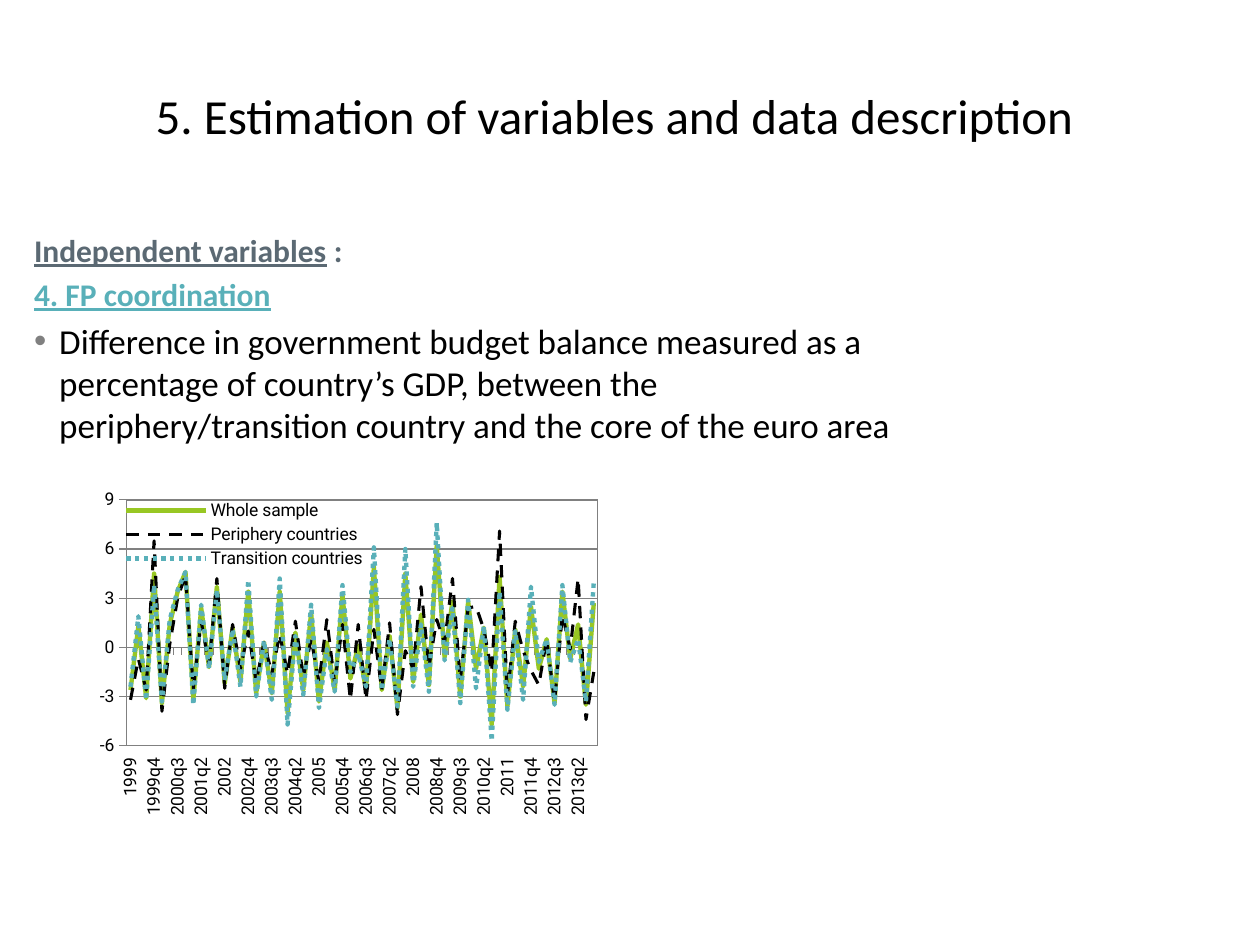
from lxml import etree
from pptx import Presentation
from pptx import util as u
from pptx.chart.data import CategoryChartData
from pptx.dml.color import RGBColor
from pptx.enum import chart as c
from pptx.enum import dml, text
from pptx.oxml import parse_xml
from pptx.oxml.ns import nsdecls, qn

BLACK = RGBColor(0x00, 0x00, 0x00)
GRAY = RGBColor(0x80, 0x80, 0x80)
SLATE = RGBColor(0x5B, 0x69, 0x73)
TEAL = RGBColor(0x59, 0xB0, 0xB9)
GREEN = RGBColor(0x98, 0xC7, 0x23)

QUARTERS = [str(year) if quarter == 1 else f"{year}q{quarter}"
            for year in range(1999, 2014) for quarter in range(1, 5)]

# Name, colour, width, dash, values
SERIES = [
    ("Whole sample", GREEN, 2.5, None,
     [-2.6, 1.3, -3.1, 4.5, -3.4, 1.4, 3.4, 4.6, -3.2, 2.4, -1.2, 3.7,
      -2.2, 1.2, -2.1, 3.4, -2.8, 0.3, -2.8, 3.4, -4, 0.9, -2.6, 2.1,
      -3.3, 0.3, -2.6, 3.2, -1.9, 0.1, -2.6, 4.9, -2.6, 0.7, -3.7, 4.5,
      -2.1, 2, -2.3, 6.2, -0.6, 2.8, -3, 2.8, -1.3, 1.2, -4.7, 4.3,
      -3.6, 1.1, -2.4, 2.5, -1.3, 0.5, -3.4, 3.4, -0.7, 1.4, -3.5, 2.7]),
    ("Periphery countries", BLACK, 1.75, dml.MSO_LINE.DASH,
     [-3.2, -0.7, -2.6, 6.5, -3.9, 0.2, 3, 4.4, -2.5, 1.6, -1.1, 4.2,
      -2.5, 1.4, -1.3, 1, -2.1, 0.3, -1.6, 0.8, -1.6, 1.6, -1.8, 0.5,
      -2.1, 1.7, -2.2, 1.4, -3.2, 1.4, -3.2, 1.1, -2.6, 1.5, -4.1, -0.2,
      -1.3, 3.7, -1.2, 1.7, 0.3, 4.2, -2, 2.4, 2.5, 1.1, -1.5, 7.1,
      -2.9, 1.6, -0.2, -1.4, -2.3, 0.5, -3.3, 2, -0.1, 4.2, -4.4, -1.5]),
    ("Transition countries", TEAL, 2.5, dml.MSO_LINE.ROUND_DOT,
     [-2.4, 1.9, -3.2, 3.8, -3.3, 1.7, 3.5, 4.6, -3.5, 2.6, -1.3, 3.5,
      -2, 1.1, -2.4, 4.1, -3, 0.4, -3.2, 4.2, -4.7, 0.7, -2.9, 2.6,
      -3.7, -0.1, -2.7, 3.8, -1.5, -0.4, -2.4, 6.1, -2.6, 0.5, -3.6, 6,
      -2.4, 1.4, -2.7, 7.6, -0.8, 2.4, -3.4, 2.9, -2.5, 1.3, -5.7, 3.4,
      -3.8, 1, -3.2, 3.7, -0.9, 0.5, -3.5, 3.8, -0.9, 0.5, -3.3, 4]),
]


def place(box, left, top, width, height):
    box.left, box.top = u.Inches(left), u.Inches(top)
    box.width, box.height = u.Inches(width), u.Inches(height)


def add_text(para, words, size=18, color=BLACK, bold=False, underline=False):
    span = para.add_run()
    span.text = words
    span.font.name = "Calibri"
    span.font.size = u.Pt(size)
    span.font.color.rgb = color
    span.font.bold = bold
    span.font.underline = underline


def set_bullet(para, mark=None):
    """Give the paragraph a hanging indent and a gray bullet, or none."""
    properties = para._p.get_or_add_pPr()
    properties.set("marL", str(u.Inches(0.2)))
    properties.set("indent", str(-u.Inches(0.2)))
    if mark is None:
        etree.SubElement(properties, qn("a:buNone"))
        return
    color = etree.SubElement(properties, qn("a:buClr"))
    etree.SubElement(color, qn("a:srgbClr"), val=str(GRAY))
    etree.SubElement(properties, qn("a:buFont"), typeface="Arial")
    etree.SubElement(properties, qn("a:buChar"), char=mark)


def add_title(page):
    title = page.shapes.title
    place(title, 0.5, 0.5, 8.75, 0.83)
    title.text_frame.vertical_anchor = text.MSO_ANCHOR.MIDDLE
    para = title.text_frame.paragraphs[0]
    para.alignment = text.PP_ALIGN.CENTER
    add_text(para, "5. Estimation of variables and data description", size=28)


def add_body(page):
    body = page.placeholders[1]
    place(body, 0.17, 0.08, 7, 6.17)
    frame = body.text_frame
    frame.vertical_anchor = text.MSO_ANCHOR.TOP
    frame.margin_top = u.Inches(1.75)

    heading = frame.paragraphs[0]
    set_bullet(heading)
    heading.space_before = u.Pt(0)
    add_text(heading, "Independent variables", color=SLATE, bold=True, underline=True)
    add_text(heading, " :", color=SLATE, bold=True)

    variable = frame.add_paragraph()
    set_bullet(variable)
    add_text(variable, "4. FP coordination", color=TEAL, bold=True, underline=True)

    definition = frame.add_paragraph()
    set_bullet(definition, "•")
    add_text(definition, "Difference in government budget balance measured as a "
             "percentage of country’s GDP, between the periphery/transition "
             "country and the core of the euro area", size=20)


def set_layout(element, left, top, width, height, inner=False):
    """Fix the place of a chart part, in fractions of the chart."""
    for old in element.findall(qn("c:layout")):
        element.remove(old)
    target = '<c:layoutTarget val="inner"/>' if inner else ""
    sizes = "".join(f'<c:{key} val="{value}"/>' for key, value in
                    zip("xywh", (left, top, width, height)))
    layout = parse_xml(
        f'<c:layout {nsdecls("c")}><c:manualLayout>{target}'
        f'<c:xMode val="edge"/><c:yMode val="edge"/>{sizes}'
        '</c:manualLayout></c:layout>')
    element.insert(0 if inner else 1, layout)


def format_axes(chart):
    values = chart.value_axis
    values.minimum_scale, values.maximum_scale, values.major_unit = -6, 9, 3
    values.tick_labels.number_format = "#,##0"
    values.tick_labels.number_format_is_linked = False
    values.major_gridlines.format.line.color.rgb = GRAY

    quarters = chart.category_axis
    quarters.tick_label_position = c.XL_TICK_LABEL_POSITION.LOW
    quarters.tick_labels.font.size = u.Pt(10)
    quarters._element.txPr.find(qn("a:bodyPr")).set("rot", "-5400000")
    no_multi = quarters._element.find(qn("c:noMultiLvlLbl"))
    for tag in ("c:tickLblSkip", "c:tickMarkSkip"):
        skip = etree.Element(qn(tag), val="3")
        if no_multi is None:
            quarters._element.append(skip)
        else:
            no_multi.addprevious(skip)

    for axis in (values, quarters):
        axis.major_tick_mark = c.XL_TICK_MARK.OUTSIDE
        axis.minor_tick_mark = c.XL_TICK_MARK.NONE
        axis.format.line.color.rgb = GRAY


def add_balance_chart(page):
    data = CategoryChartData(number_format="0.0")
    data.categories = QUARTERS
    for name, _, _, _, numbers in SERIES:
        data.add_series(name, numbers)
    chart = page.shapes.add_chart(
        c.XL_CHART_TYPE.LINE, u.Inches(0.58), u.Inches(3.83),
        u.Inches(4.25), u.Inches(2.75), data).chart
    chart.has_title = False
    chart.font.name, chart.font.size = "Roboto", u.Pt(10)
    chart.font.color.rgb = BLACK
    chart.plots[0].vary_by_categories = False
    for series, (_, color, width, dash, _) in zip(chart.plots[0].series, SERIES):
        series.smooth = False
        series.marker.style = c.XL_MARKER_STYLE.NONE
        line = series.format.line
        line.color.rgb, line.width = color, u.Pt(width)
        if dash:
            line.dash_style = dash
    format_axes(chart)

    # Legend over the plot, and a gray frame round the plot
    chart.has_legend = True
    chart.legend.position = c.XL_LEGEND_POSITION.RIGHT
    chart.legend.include_in_layout = False
    set_layout(chart.legend._element, 0.08, 0.04, 0.48, 0.22)
    plot_area = chart._chartSpace.chart.plotArea
    set_layout(plot_area, 0.1, 0.05, 0.88, 0.71, inner=True)
    plot_area.append(parse_xml(
        f'<c:spPr {nsdecls("c", "a")}><a:noFill/><a:ln w="9525"><a:solidFill>'
        f'<a:srgbClr val="{GRAY}"/></a:solidFill></a:ln></c:spPr>'))


def main():
    deck = Presentation()
    deck.slide_width, deck.slide_height = u.Inches(10), u.Inches(7.5)
    page = deck.slides.add_slide(deck.slide_layouts[1])
    add_body(page)
    add_balance_chart(page)
    add_title(page)
    deck.save("out.pptx")


if __name__ == "__main__":
    main()
